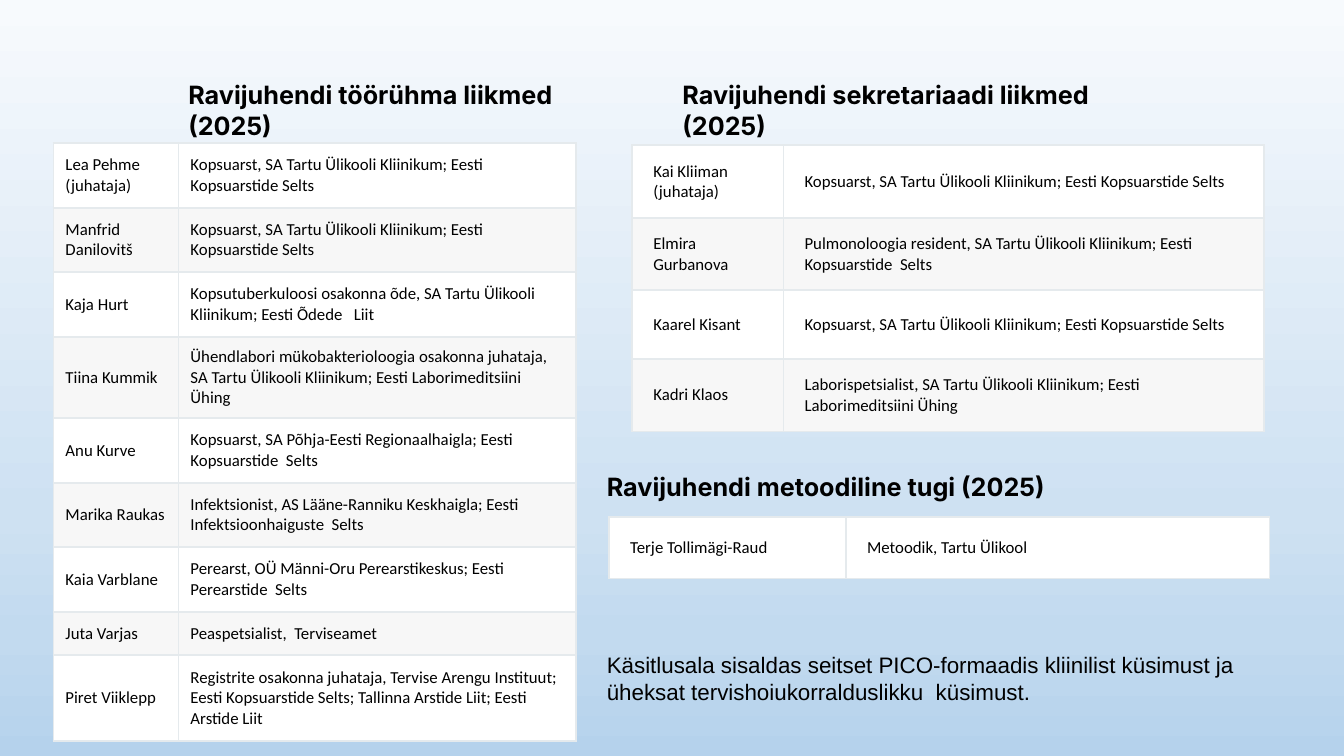
import copy

import pptx
import pptx.dml.color
import pptx.enum.text
import pptx.oxml
import pptx.oxml.ns
import pptx.util

RGB = pptx.dml.color.RGBColor
BLACK = RGB(0x00, 0x00, 0x00)
WHITE = RGB(0xFF, 0xFF, 0xFF)
STRIPE = RGB(0xF7, 0xF7, 0xF7)
BORDER = RGB(0xE5, 0xEA, 0xED)
SKY = [
    (0, RGB(0xF7, 0xFA, 0xFD)),
    (0.68, RGB(0xCE, 0xE1, 0xF2)),
    (0.84, RGB(0xC2, 0xDA, 0xEF)),
    (1, RGB(0xB5, 0xD2, 0xEC)),
]
PX = 9144  # 100 px to the inch

WORKGROUP = [
    ("Lea Pehme (juhataja)", "Kopsuarst, SA Tartu Ülikooli Kliinikum; Eesti Kopsuarstide Selts"),
    ("Manfrid Danilovitš", "Kopsuarst, SA Tartu Ülikooli Kliinikum; Eesti Kopsuarstide Selts"),
    ("Kaja Hurt", "Kopsutuberkuloosi osakonna õde, SA Tartu Ülikooli Kliinikum; Eesti Õdede   Liit"),
    ("Tiina Kummik", "Ühendlabori mükobakterioloogia osakonna juhataja, "
                     "SA Tartu Ülikooli Kliinikum; Eesti Laborimeditsiini Ühing"),
    ("Anu Kurve", "Kopsuarst, SA Põhja-Eesti Regionaalhaigla; Eesti Kopsuarstide  Selts"),
    ("Marika Raukas", "Infektsionist, AS Lääne-Ranniku Keskhaigla; Eesti Infektsioonhaiguste  Selts"),
    ("Kaia Varblane", "Perearst, OÜ Männi-Oru Perearstikeskus; Eesti Perearstide  Selts"),
    ("Juta Varjas", "Peaspetsialist,  Terviseamet"),
    ("Piret Viiklepp", "Registrite osakonna juhataja, Tervise Arengu Instituut; "
                       "Eesti Kopsuarstide Selts; Tallinna Arstide Liit; Eesti Arstide Liit"),
]
SECRETARIAT = [
    ("Kai Kliiman (juhataja)", "Kopsuarst, SA Tartu Ülikooli Kliinikum; Eesti Kopsuarstide Selts"),
    ("Elmira Gurbanova", "Pulmonoloogia resident, SA Tartu Ülikooli Kliinikum; Eesti Kopsuarstide  Selts"),
    ("Kaarel Kisant", "Kopsuarst, SA Tartu Ülikooli Kliinikum; Eesti Kopsuarstide Selts"),
    ("Kadri Klaos", "Laborispetsialist, SA Tartu Ülikooli Kliinikum; Eesti Laborimeditsiini Ühing"),
]
SUPPORT = [("Terje Tollimägi-Raud", "Metoodik, Tartu Ülikool")]


def px(n):
    return pptx.util.Emu(n * PX)


def write(tf, text, font="Calibri", size=12, bold=False, color=BLACK):
    tf.word_wrap = True
    r = tf.paragraphs[0].add_run()
    r.text = text
    r.font.name = font
    r.font.size = pptx.util.Pt(size)
    r.font.bold = bold
    r.font.color.rgb = color


def add_text(s, x, y, w, h, text, **fmt):
    sp = s.shapes.add_textbox(px(x), px(y), px(w), px(h))
    write(sp.text_frame, text, **fmt)


def add_heading(s, x, y, w, h, text):
    add_text(s, x, y, w, h, text, font="Inter", size=18, bold=True)


def add_borders(cell):
    tcPr = cell._tc.get_or_add_tcPr()
    for side in "LRTB":
        tcPr.append(pptx.oxml.parse_xml(
            f'<a:ln{side} {pptx.oxml.ns.nsdecls("a")} w="{pptx.util.Pt(1.5)}">'
            f'<a:solidFill><a:srgbClr val="{BORDER}"/></a:solidFill></a:ln{side}>'))


def add_people(s, x, y, widths, heights, people, pad_x, pad_y):
    frame = s.shapes.add_table(len(people), len(widths), px(x), px(y),
                               px(sum(widths)), px(sum(heights)))
    table = frame.table
    table.first_row = False
    table.horz_banding = False
    for col, w in zip(table.columns, widths):
        col.width = px(w)
    for i, (row, h, person) in enumerate(zip(table.rows, heights, people)):
        row.height = px(h)
        for cell, text in zip(row.cells, person):
            add_borders(cell)
            cell.fill.solid()
            cell.fill.fore_color.rgb = STRIPE if i % 2 else WHITE
            cell.margin_left = cell.margin_right = px(pad_x)
            cell.margin_top = cell.margin_bottom = px(pad_y)
            cell.vertical_anchor = pptx.enum.text.MSO_ANCHOR.MIDDLE
            write(cell.text_frame, text)


def set_background(s):
    fill = s.background.fill
    fill.gradient()
    fill.gradient_angle = 270
    stops = s._element.find(".//" + pptx.oxml.ns.qn("a:gsLst"))
    while len(stops) < len(SKY):
        stops.append(copy.deepcopy(stops[0]))
    for stop, (position, color) in zip(fill.gradient_stops, SKY):
        stop.position = position
        stop.color.rgb = color


def main():
    prs = pptx.Presentation()
    prs.slide_width, prs.slide_height = px(1333), px(750)
    s = prs.slides.add_slide(prs.slide_layouts[6])
    set_background(s)

    # Working group
    add_heading(s, 177, 74, 410, 101, "Ravijuhendi töörühma liikmed (2025)")
    add_people(s, 53, 142, [124, 394], [64, 64, 64, 81, 64, 64, 64, 43, 85],
               WORKGROUP, pad_x=12, pad_y=9)

    # Secretariat
    add_heading(s, 667, 74, 442, 101, "Ravijuhendi sekretariaadi liikmed (2025)")
    add_people(s, 627, 144, [150, 477], [68] * 4, SECRETARIAT, pad_x=21, pad_y=16)

    # Methodological support
    add_heading(s, 592, 463, 695, 71, "Ravijuhendi metoodiline tugi (2025)")
    add_people(s, 604, 513, [235, 420], [61], SUPPORT, pad_x=21, pad_y=16)

    # Scope
    add_text(s, 592, 641, 700, 91,
             "Käsitlusala sisaldas seitset PICO-formaadis kliinilist küsimust ja "
             "üheksat tervishoiukorralduslikku  küsimust.", font="Arial", size=16)

    prs.save("out.pptx")


if __name__ == "__main__":
    main()
